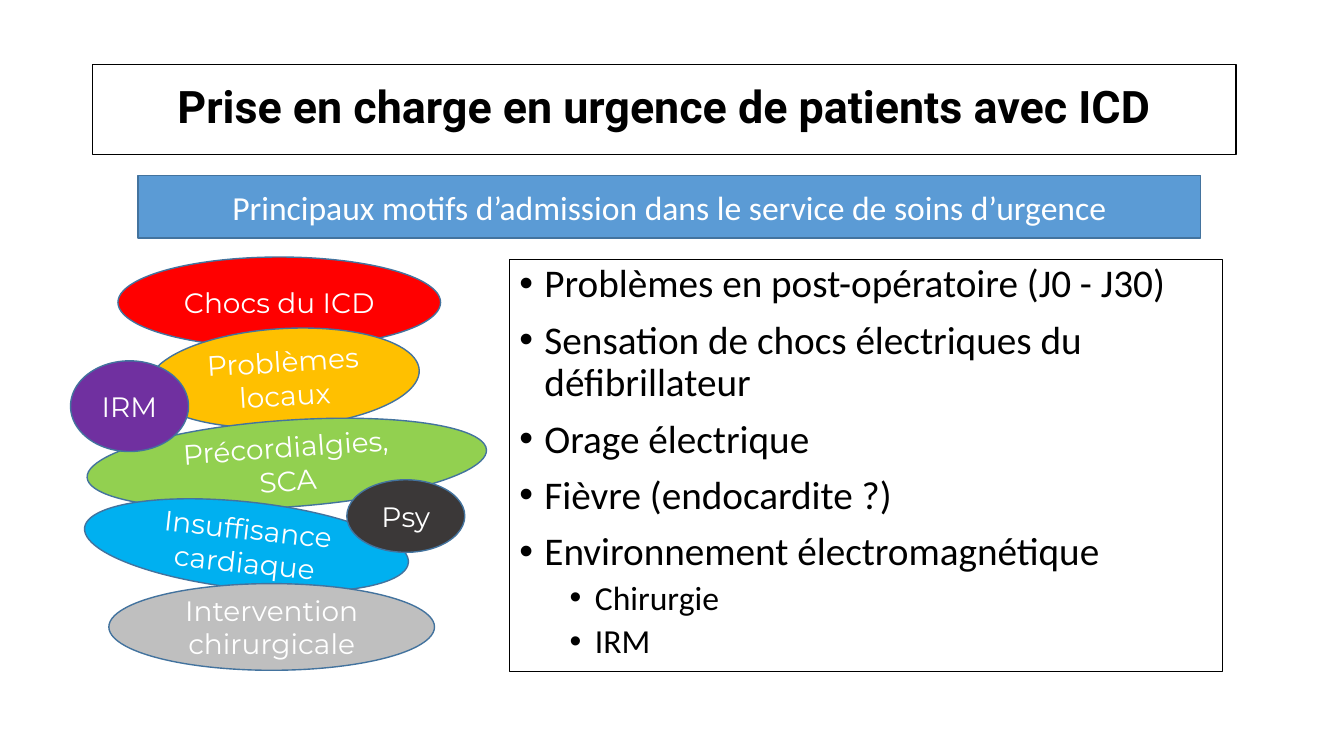
"""Build the slide on emergency care of patients with an ICD."""
from lxml import etree
from pptx import Presentation
from pptx import util as u
from pptx.dml.color import RGBColor
from pptx.enum import shapes, text
from pptx.oxml.ns import qn

COLORS = {
    "black": "000000", "white": "FFFFFF", "blue": "5B9BD5", "outline": "43739E",
    "red": "FF0000", "amber": "FFC000", "green": "92D050", "sky": "00B0F0",
    "gray": "BFBFBF", "purple": "7030A0", "charcoal": "3B3838",
}
TITLE = "Prise en charge en urgence de patients avec ICD"
BANNER = "Principaux motifs d’admission dans le service de soins d’urgence"
REASONS = [
    ("Problèmes en post-opératoire (J0 - J30)", 0),
    ("Sensation de chocs électriques du défibrillateur", 0),
    ("Orage électrique", 0),
    ("Fièvre (endocardite ?)", 0),
    ("Environnement électromagnétique", 0),
    ("Chirurgie", 1),
    ("IRM", 1),
]
LEVELS = [
    {"size": 28, "before": 10, "indent": 0.25},
    {"size": 24, "before": 5, "indent": 0.75},
]
OVALS = [
    ("Chocs du ICD", "red", (1.17, 2.55, 3.2, 0.9), 0),
    ("Problèmes locaux", "amber", (1.47, 3.26, 2.69, 0.98), -3.4),
    ("Précordialgies, SCA", "green", (0.86, 4.17, 3.97, 0.86), -4),
    ("Insuffisance cardiaque", "sky", (0.83, 4.98, 3.23, 0.86), 6.2),
    ("Intervention chirurgicale", "gray", (1.08, 5.79, 3.23, 0.86), 0),
    ("IRM", "purple", (0.7, 3.58, 1.17, 0.9), 0),
    ("Psy", "charcoal", (3.44, 4.76, 1.17, 0.72), 0),
]


def color(name):
    """Return the named colour."""
    return RGBColor.from_string(COLORS[name])


def write(para, words, size=20, font="Calibri", ink="white", bold=False,
          align=text.PP_ALIGN.CENTER, spacing=1.0, before=0):
    """Write one formatted paragraph."""
    para.alignment = align
    para.line_spacing = spacing
    para.space_before = u.Pt(before)
    span = para.add_run()
    span.text = words
    span.font.size = u.Pt(size)
    span.font.name = font
    span.font.bold = bold
    span.font.color.rgb = color(ink)


def add_bullet(para, indent):
    """Give a paragraph a hanging round bullet."""
    properties = para._p.get_or_add_pPr()
    properties.set("marL", str(u.Inches(indent)))
    properties.set("indent", str(u.Inches(-0.25)))
    etree.SubElement(properties, qn("a:buFont")).set("typeface", "Arial")
    etree.SubElement(properties, qn("a:buChar")).set("char", "•")


def frame(box, place, anchor, line, width):
    """Place and outline a box and prepare its text frame."""
    box.left, box.top, box.width, box.height = map(u.Inches, place)
    box.line.color.rgb = color(line)
    box.line.width = u.Pt(width)
    box.text_frame.word_wrap = True
    box.text_frame.auto_size = text.MSO_AUTO_SIZE.NONE
    box.text_frame.vertical_anchor = anchor


def add_label(page, kind, words, fill, place, turn=0, **style):
    """Add a filled shape with centred text."""
    box = page.shapes.add_shape(kind, *map(u.Inches, place))
    box.shadow.inherit = False
    box.fill.solid()
    box.fill.fore_color.rgb = color(fill)
    frame(box, place, text.MSO_ANCHOR.MIDDLE, "outline", 1)
    box.rotation = turn
    write(box.text_frame.paragraphs[0], words, **style)


def main():
    """Assemble and save the deck."""
    deck = Presentation()
    deck.slide_width, deck.slide_height = u.Inches(13.33), u.Inches(7.5)
    page = deck.slides.add_slide(deck.slide_layouts[1])

    title, body = page.placeholders
    frame(title, (0.92, 0.64, 11.34, 0.89), text.MSO_ANCHOR.MIDDLE, "black", 1)
    write(title.text_frame.paragraphs[0], TITLE, size=32, font="Roboto",
          ink="black", bold=True, spacing=0.9)

    frame(body, (5.05, 2.57, 7.08, 4.09), text.MSO_ANCHOR.TOP, "black", 0.75)
    for index, (words, level) in enumerate(REASONS):
        paras = body.text_frame
        para = paras.add_paragraph() if index else paras.paragraphs[0]
        para.level = level
        look = LEVELS[level]
        write(para, words, size=look["size"], ink="black", spacing=0.9,
              align=text.PP_ALIGN.LEFT, before=look["before"])
        add_bullet(para, look["indent"])

    add_label(page, shapes.MSO_SHAPE.RECTANGLE, BANNER, "blue",
              (1.37, 1.74, 10.54, 0.62), size=24)
    for words, fill, place, turn in OVALS:
        add_label(page, shapes.MSO_SHAPE.OVAL, words, fill, place, turn,
                  font="Montserrat")

    deck.save("out.pptx")


if __name__ == "__main__":
    main()
